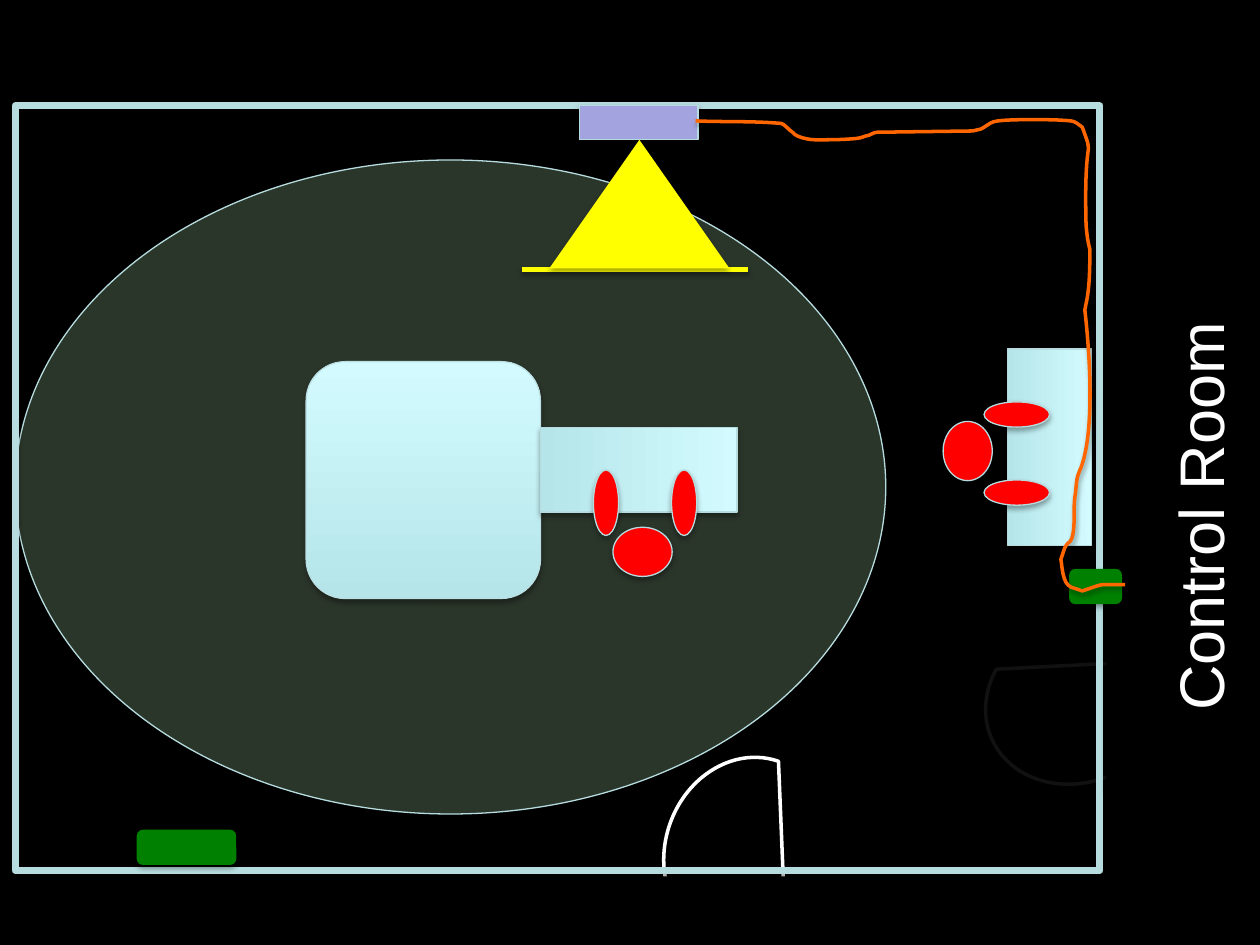
from lxml import etree
from pptx import Presentation
from pptx.dml.color import RGBColor
from pptx.enum.shapes import MSO_CONNECTOR, MSO_SHAPE
from pptx.enum.text import MSO_AUTO_SIZE
from pptx.oxml.ns import qn
from pptx.util import Inches, Pt

RECT, ROUNDED = MSO_SHAPE.RECTANGLE, MSO_SHAPE.ROUNDED_RECTANGLE
OVAL, CHORD, TRIANGLE = MSO_SHAPE.OVAL, MSO_SHAPE.CHORD, MSO_SHAPE.ISOSCELES_TRIANGLE
STRAIGHT = MSO_CONNECTOR.STRAIGHT
GROW = MSO_AUTO_SIZE.SHAPE_TO_FIT_TEXT

BLACK, WHITE, RED, GREEN = "000000", "FFFFFF", "FF0000", "008000"
YELLOW, ORANGE, LILAC, MINT = "FFFF00", "FF6600", "A3A3E0", "CCFFCC"
EDGE, TABLE_EDGE, FAINT = "B6DCDF", "BBE0E3", "111111"
TOP_SHADES = ("B5E5E9", "D3FBFF")

CABLE_START = (5.52, 0.96)
CABLE_RUN = [
    (5.75, 0.97, 5.97, 0.96, 6.2, 0.98), (6.22, 0.98, 6.27, 1.04, 6.29, 1.05),
    (6.3, 1.06, 6.32, 1.08, 6.33, 1.08), (6.37, 1.1, 6.44, 1.11, 6.47, 1.11),
    (6.58, 1.11, 6.68, 1.11, 6.79, 1.1), (6.82, 1.1, 6.84, 1.09, 6.87, 1.08),
    (6.9, 1.08, 6.93, 1.05, 6.96, 1.05), (7.72, 1.04),
    (7.75, 1.03, 7.79, 1.03, 7.81, 1.01), (7.86, 0.98, 7.86, 0.97, 7.92, 0.96),
    (8.01, 0.95, 8.1, 0.95, 8.2, 0.95), (8.3, 0.95, 8.4, 0.95, 8.5, 0.96),
    (8.52, 0.96, 8.53, 0.97, 8.55, 0.98), (8.56, 0.99, 8.58, 1, 8.59, 1.01),
    (8.69, 1.29, 8.6, 1, 8.62, 1.79), (8.63, 1.89, 8.63, 1.9, 8.65, 1.98),
    (8.65, 2.1, 8.65, 2.28, 8.62, 2.41), (8.62, 2.43, 8.61, 2.44, 8.61, 2.46),
    (8.61, 2.47, 8.72, 3.33, 8.58, 3.71), (8.57, 3.73, 8.56, 3.76, 8.55, 3.79),
    (8.54, 3.84, 8.54, 3.9, 8.53, 3.95), (8.52, 4.04, 8.53, 4.13, 8.52, 4.21),
    (8.5, 4.34, 8.49, 4.27, 8.45, 4.35), (8.44, 4.38, 8.42, 4.44, 8.42, 4.44),
    (8.43, 4.49, 8.43, 4.63, 8.5, 4.66), (8.59, 4.69),
    (8.61, 4.68, 8.63, 4.68, 8.65, 4.67), (8.68, 4.66, 8.73, 4.64, 8.76, 4.64),
    (8.82, 4.64, 8.87, 4.64, 8.93, 4.64),
]


def rgb(value):
    """Turn a hex string into a colour."""
    return RGBColor.from_string(value)


def add_shadow(part, opacity=35, distance=1.8):
    """Give a shape or connector a soft black shadow below it."""
    properties = part._element.spPr
    effects = properties.find(qn("a:effectLst"))
    if effects is None:
        effects = etree.SubElement(properties, qn("a:effectLst"))
    shadow = etree.SubElement(
        effects, qn("a:outerShdw"), blurRad=str(Pt(3.1)), dist=str(Pt(distance)),
        dir="5400000", rotWithShape="0")
    color = etree.SubElement(shadow, qn("a:srgbClr"), val=BLACK)
    etree.SubElement(color, qn("a:alpha"), val=str(opacity * 1000))


def set_line(line, color, width):
    """Colour a line and set its width, or hide it when it has no colour."""
    if color:
        line.color.rgb = rgb(color)
        line.width = Pt(width)
    else:
        line.fill.background()


def add_part(slide, kind, box, fill=None, edge=None, width=0.75, rotation=0):
    """Add one preset shape with a flat fill or none."""
    part = slide.shapes.add_shape(kind, *map(Inches, box))
    part.rotation = rotation
    if fill:
        part.fill.solid()
        part.fill.fore_color.rgb = rgb(fill)
    else:
        part.fill.background()
    set_line(part.line, edge, width)
    part.shadow.inherit = False
    add_shadow(part)
    return part


def shade_top(part, angle):
    """Fill a table top with the pale blue gradient."""
    part.fill.gradient()
    part.fill.gradient_angle = angle
    for stop, color in zip(part.fill.gradient_stops, TOP_SHADES):
        stop.color.rgb = rgb(color)


def add_door(slide, box, rotation, color, angles):
    """Draw a door swing as a chord between two angles."""
    door = add_part(slide, CHORD, box, edge=color, width=2, rotation=rotation)
    for index, degrees in enumerate(angles):
        door.adjustments[index] = degrees * 0.6


def add_room(slide, box):
    """Draw the floor oval and the walls of the room."""
    left, top, width, height = box
    floor = add_part(slide, OVAL, (left, top + 0.43, 6.91, 5.19), MINT, EDGE)
    tint = floor._element.spPr.find(qn("a:solidFill"))[0]
    etree.SubElement(tint, qn("a:alpha"), val="21000")
    add_part(slide, RECT, box, edge=EDGE, width=4)


def add_workstation(slide, center, turn, shade_angle):
    """Place a desk and its seated operator around the desk's center."""
    x, y = center
    desk = add_part(slide, RECT, (x - 0.78, y - 0.335, 1.56, 0.67),
                    edge=EDGE, rotation=(90 + turn) % 360)
    shade_top(desk, shade_angle)
    head, arms = (-0.65, 0.03, 0.39, 0.47), [(-0.26, dy, 0.52, 0.2) for dy in (-0.26, 0.36)]
    for dx, dy, width, height in [head, *arms]:
        if turn:
            dx, dy = dy, -dx
        add_part(slide, OVAL, (x + dx - width / 2, y + dy - height / 2, width, height),
                 RED, EDGE, rotation=turn)


def add_projector(slide, box):
    """Draw the projector, its beam and the screen line under the beam."""
    left, top, width, height = box
    middle, beam_top = left + width / 2, top + height
    screen_y = beam_top + 1.03
    screen = slide.shapes.add_connector(
        STRAIGHT, *map(Inches, (4.14, screen_y, 5.94, screen_y)))
    set_line(screen.line, YELLOW, 3)
    add_shadow(screen, 38, 1.6)
    add_part(slide, RECT, box, LILAC, EDGE)
    add_part(slide, TRIANGLE, (middle - 0.71, beam_top, 1.43, 1.02), YELLOW)


def bend_segments(cable, run):
    """Turn the straight segments of the cable into its cubic curves."""
    segments = list(cable._element.iter(qn("a:lnTo")))
    for segment, piece in zip(segments, run):
        if len(piece) == 6:
            curve = etree.Element(qn("a:cubicBezTo"))
            for x, y in zip(piece[::2], piece[1::2]):
                etree.SubElement(curve, qn("a:pt"), x=str(Inches(x) - cable.left),
                                 y=str(Inches(y) - cable.top))
            segment.getparent().replace(segment, curve)


def add_cable(slide, start, run):
    """Draw the cable from the projector to the wall socket."""
    builder = slide.shapes.build_freeform(*map(Inches, start))
    ends = [tuple(map(Inches, piece[-2:])) for piece in run]
    builder.add_line_segments(ends, close=False)
    cable = builder.convert_to_shape()
    bend_segments(cable, run)
    cable.fill.background()
    set_line(cable.line, ORANGE, 2)
    cable.shadow.inherit = False
    add_shadow(cable, 38, 1.6)


def add_room_label(slide, box):
    """Write the name of the neighbouring room up the right side."""
    label = slide.shapes.add_textbox(*map(Inches, box))
    label.rotation = 270
    label.text_frame.word_wrap = True
    label.text_frame.auto_size = GROW
    run = label.text_frame.paragraphs[0].add_run()
    run.text = "Control Room"
    for name, value in {"name": "Arial", "size": Pt(36)}.items():
        setattr(run.font, name, value)
    run.font.color.rgb = rgb(WHITE)


def main():
    """Build the room plan and save it."""
    deck = Presentation()
    deck.slide_width, deck.slide_height = Inches(10), Inches(7.5)
    slide = deck.slides.add_slide(deck.slide_layouts[6])
    slide.background.fill.solid()
    slide.background.fill.fore_color.rgb = rgb(BLACK)
    add_door(slide, (5.28, 6, 1.3, 1.51), 19.2, WHITE, (45, 270))
    add_door(slide, (7.91, 4.8, 1.3, 1.51), 245.5, FAINT, (90, 315))
    add_room(slide, (0.12, 0.84, 8.61, 6.07))
    shade_top(add_part(slide, ROUNDED, (2.43, 2.87, 1.86, 1.88), edge=TABLE_EDGE), 90)
    add_part(slide, RECT, (8.78, 4.66, 0.79, 1.6), BLACK)
    add_part(slide, RECT, (5.48, 6.55, 0.79, 1.6), BLACK, rotation=90)
    add_workstation(slide, (8.33, 3.55), 0, 90)
    add_workstation(slide, (5.07, 3.73), 270, 0)
    add_projector(slide, (4.6, 0.84, 0.94, 0.27))
    for box in ((8.49, 4.52, 0.41, 0.27), (1.09, 6.59, 0.78, 0.27)):
        add_part(slide, ROUNDED, box, GREEN, GREEN)
    add_cable(slide, CABLE_START, CABLE_RUN)
    add_room_label(slide, (7.8, 3.66, 3.45, 0.71))
    deck.save("out.pptx")


if __name__ == "__main__":
    main()
